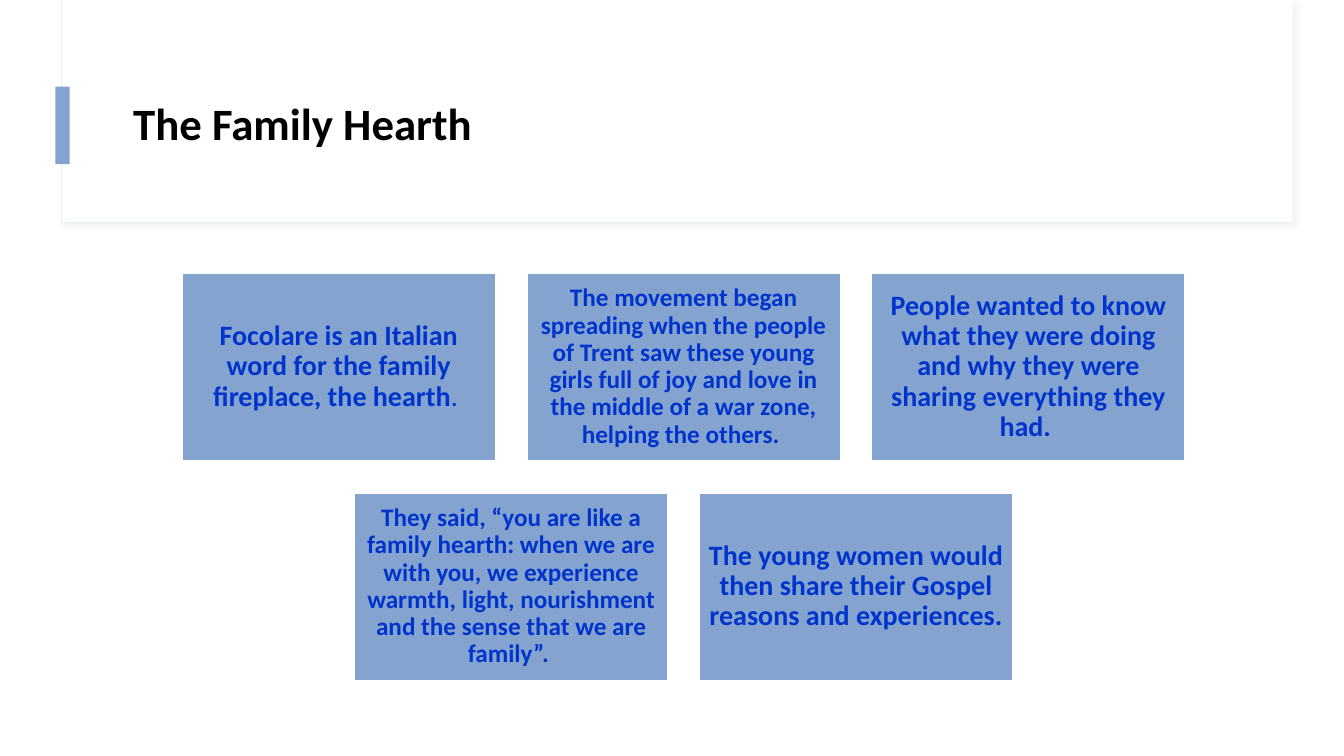
from lxml.etree import SubElement
from pptx import Presentation
from pptx.dml.color import RGBColor
from pptx.enum.shapes import MSO_SHAPE
from pptx.enum.text import MSO_ANCHOR, MSO_AUTO_SIZE, PP_ALIGN
from pptx.oxml.ns import qn
from pptx.util import Inches, Pt

WHITE = RGBColor(0xFF, 0xFF, 0xFF)
BLACK = RGBColor(0x00, 0x00, 0x00)
BLUE = RGBColor(0x84, 0xA4, 0xCF)
TEXT_BLUE = RGBColor(0x00, 0x33, 0xCC)
PALE = RGBColor(0xE4, 0xF0, 0xF0)
FONT = "Calibri"

CARD_W, CARD_H, GAP = 3.11, 1.86, 0.31
CENTER_X, CARDS_TOP, ROW_STEP = 6.78, 2.71, 2.18

# Each card: font size, inset, runs of (text, bold)
CARD_ROWS = [
    [
        (20, 0.08, [("Focolare is an Italian word for the family fireplace, "
                     "the hearth", True), (". ", False)]),
        (18, 0.07, [("The movement began spreading when the people of Trent "
                     "saw these young girls full of joy and love in the middle "
                     "of a war zone, helping the others. ", True)]),
        (20, 0.08, [("People wanted to know what they were doing and why they "
                     "were sharing everything they had. ", True)]),
    ],
    [
        (18, 0.07, [("They said, “you are like a family hearth: when we are "
                     "with you, we experience warmth, light, nourishment and "
                     "the sense that we are family”. ", True)]),
        (20, 0.08, [("The young women would then share their Gospel reasons "
                     "and experiences.", True)]),
    ],
]


class SlideBuilder:
    def __init__(self, prs):
        self.s = prs.slides.add_slide(prs.slide_layouts[5])

    def rect(self, x, y, w, h, fill, line=None, line_width=1):
        sp = self.s.shapes.add_shape(MSO_SHAPE.RECTANGLE, Inches(x), Inches(y),
                                     Inches(w), Inches(h))
        sp.shadow.inherit = False
        sp.fill.solid()
        sp.fill.fore_color.rgb = fill
        if line is None:
            sp.line.fill.background()
        else:
            sp.line.color.rgb = line
            sp.line.width = Pt(line_width)
        return sp

    def soft_shadow(self, sp):
        effects = sp.element.spPr.find(qn("a:effectLst"))
        shadow = SubElement(effects, qn("a:outerShdw"), blurRad=str(Pt(4)),
                            dist=str(Pt(3)), dir=str(45 * 60000))
        color = SubElement(shadow, qn("a:srgbClr"), val="D9D9D9")
        SubElement(color, qn("a:alpha"), val="30000")

    def add_text(self, tf, runs, size, color, align):
        tf.word_wrap = True
        tf.auto_size = MSO_AUTO_SIZE.NONE
        tf.vertical_anchor = MSO_ANCHOR.MIDDLE
        p = tf.paragraphs[0]
        p.alignment = align
        p.line_spacing = 0.9
        for text, bold in runs:
            r = p.add_run()
            r.text = text
            r.font.name = FONT
            r.font.size = Pt(size)
            r.font.bold = bold
            r.font.color.rgb = color

    def title(self, text, x, y, w, h):
        sp = self.s.shapes.title
        sp.left, sp.top = Inches(x), Inches(y)
        sp.width, sp.height = Inches(w), Inches(h)
        self.add_text(sp.text_frame, [(text, True)], 32, BLACK, PP_ALIGN.LEFT)
        # Bring the title in front of the header panel
        sp.element.getparent().append(sp.element)

    def card(self, x, y, size, inset, runs):
        sp = self.rect(x, y, CARD_W, CARD_H, BLUE, WHITE)
        tf = sp.text_frame
        tf.margin_left = tf.margin_right = Inches(inset)
        tf.margin_top = tf.margin_bottom = Inches(inset)
        self.add_text(tf, runs, size, TEXT_BLUE, PP_ALIGN.CENTER)


def main():
    prs = Presentation()
    prs.slide_width, prs.slide_height = Inches(13.33), Inches(7.5)
    builder = SlideBuilder(prs)

    panel = builder.rect(0.61, 0, 12.21, 2.21, WHITE, PALE, 0.75)
    builder.soft_shadow(panel)
    builder.rect(0.62, 0, 12.2, 2.2, WHITE)
    builder.rect(0.55, 0.86, 0.14, 0.77, BLUE)
    builder.title("The Family Hearth", 1.22, 0.6, 11.12, 1.29)

    for row, cards in enumerate(CARD_ROWS):
        row_width = len(cards) * (CARD_W + GAP) - GAP
        left = CENTER_X - row_width / 2
        for col, (size, inset, runs) in enumerate(cards):
            builder.card(left + col * (CARD_W + GAP),
                         CARDS_TOP + row * ROW_STEP, size, inset, runs)

    prs.save("out.pptx")


if __name__ == "__main__":
    main()
